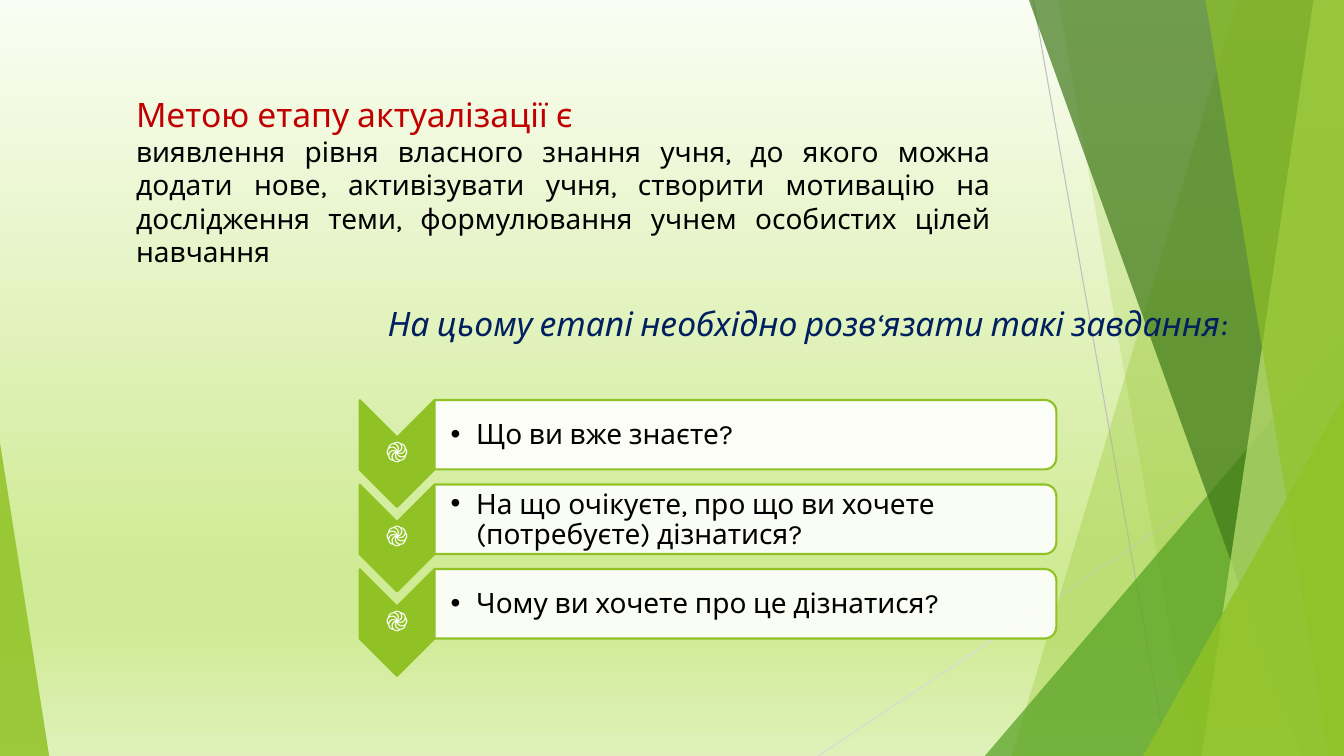
from lxml import etree
from pptx import Presentation
from pptx.dml.color import RGBColor
from pptx.enum import shapes, text
from pptx.oxml.ns import qn
from pptx.util import Cm, Pt

FONT = "Karla"
GREEN, WHITE, BLACK = "90C226", "FFFFFF", "000000"
WIDTH, HEIGHT = 33.87, 19.05
BACKGROUND = [(0, "FAFDF3"), (74, "D0EB96"), (83, "D0EB96"), (100, "DFF1B9")]

RAYS = [((26.04, 0), (29.41, HEIGHT), "BFBFBF"),
        ((WIDTH, 10.24), (20.62, HEIGHT), "D9D9D9")]
# Bands: top and bottom x of the slanted edge. Triangles: left, top, width, apex.
PANELS = [
    ("band", (31.19, 25.5), GREEN, 30),
    ("band", (26.67, 30.05), GREEN, 20),
    ("triangle", (24.82, 8.46, 9.05, 1), "54A021", 72),
    ("band", (25.93, 32.79), "3F7819", 70),
    ("band", (33.1, 30.28), "C0E474", 70),
    ("band", (30.38, 33.48), GREEN, 65),
    ("triangle", (28.81, 9.98, 5.06, 1), GREEN, 80),
    ("triangle", (0, 11.15, 1.24, 0), GREEN, 85),
]

GOAL_TITLE = "Метою етапу актуалізації є"
GOAL = ("виявлення рівня власного знання учня, до якого можна додати нове, "
        "активізувати учня, створити мотивацію на дослідження теми, "
        "формулювання учнем особистих цілей навчання")
TASKS_TITLE = "На цьому етапі необхідно розв‘язати такі завдання:"
QUESTIONS = ["Що ви вже знаєте?",
             "На що очікуєте, про що ви хочете (потребуєте) дізнатися?",
             "Чому ви хочете про це дізнатися?"]
MARK = "֎"
ROW_STEP = 2.13
TIGHT = {"margin_left": Cm(0.03), "margin_right": Cm(0.03),
         "margin_top": Cm(0.03), "margin_bottom": Cm(0.03),
         "vertical_anchor": text.MSO_ANCHOR.MIDDLE}


def rgb(value):
    return RGBColor.from_string(value)


def apply(target, values):
    for name, value in values.items():
        setattr(target, name, value)


def paint(sp, fill, opacity=100, line=None):
    sp.shadow.inherit = False
    sp.fill.solid()
    sp.fill.fore_color.rgb = rgb(fill)
    if opacity < 100:
        color = sp.fill._xPr.find(qn("a:solidFill"))[0]
        etree.SubElement(color, qn("a:alpha"), val=str(opacity * 1000))
    if line:
        sp.line.color.rgb = rgb(line)
        sp.line.width = Pt(1.5)
    else:
        sp.line.fill.background()


def add_preset(s, kind, box):
    return s.shapes.add_shape(kind, *map(Cm, box))


def add_text(s, box, frame=None):
    tf = s.shapes.add_textbox(*map(Cm, box)).text_frame
    apply(tf, {"word_wrap": True, **(frame or {})})
    return tf


def write(p, words, size, color, paragraph=None, italic=False):
    apply(p, paragraph or {})
    r = p.add_run()
    r.text = words
    apply(r.font, {"name": FONT, "size": Pt(size), "italic": italic})
    r.font.color.rgb = rgb(color)


def set_bullet(p):
    pr = p._p.get_or_add_pPr()
    pr.set("marL", str(Cm(0.64)))
    pr.set("indent", str(Cm(-0.64)))
    etree.SubElement(pr, qn("a:buFont"), typeface="Arial")
    etree.SubElement(pr, qn("a:buChar"), char="•")


def draw_background(s):
    fill = s.background.fill
    fill.gradient()
    fill.gradient_angle = 270
    stops = s.element.find(".//" + qn("a:gsLst"))
    for stop in list(stops):
        stops.remove(stop)
    for position, color in BACKGROUND:
        stop = etree.SubElement(stops, qn("a:gs"), pos=str(position * 1000))
        etree.SubElement(stop, qn("a:srgbClr"), val=color)


def draw_decoration(s):
    for start, end, color in RAYS:
        ray = s.shapes.add_connector(shapes.MSO_CONNECTOR.STRAIGHT,
                                     *map(Cm, start + end))
        ray.line.color.rgb = rgb(color)
        ray.line.width = Pt(0.75)
        etree.SubElement(ray._element.spPr, qn("a:effectLst"))
    for kind, geometry, color, opacity in PANELS:
        if kind == "band":
            top_x, bottom_x = geometry
            corners = [(WIDTH, 0), (WIDTH, HEIGHT), (bottom_x, HEIGHT)]
            outline = s.shapes.build_freeform(Cm(top_x), 0)
            outline.add_line_segments([(Cm(x), Cm(y)) for x, y in corners])
            sp = outline.convert_to_shape()
        else:
            left, top, width, apex = geometry
            sp = add_preset(s, shapes.MSO_SHAPE.ISOSCELES_TRIANGLE,
                            (left, top, width, HEIGHT - top))
            sp.adjustments[0] = apex
        paint(sp, color, opacity)


def draw_question(s, words, dy):
    chevron = add_preset(s, shapes.MSO_SHAPE.CHEVRON, (8.66, 10.49 + dy, 2.69, 1.88))
    paint(chevron, GREEN, line=GREEN)
    tf = add_text(s, (9.07, 11.02 + dy, 1.88, 0.81), TIGHT)
    write(tf.paragraphs[0], MARK, 20, WHITE,
          {"alignment": text.PP_ALIGN.CENTER, "line_spacing": 0.9})

    bar = add_preset(s, shapes.MSO_SHAPE.ROUND_2_SAME_RECTANGLE,
                     (17.91, 3.12 + dy, 1.75, 15.67))
    paint(bar, WHITE, 90, GREEN)
    chevron.rotation = bar.rotation = 90
    tf = add_text(s, (10.95, 10.19 + dy, 15.57, 1.57),
                  {**TIGHT, "margin_left": Cm(0.41)})
    p = tf.paragraphs[0]
    p.line_spacing = 0.9
    set_bullet(p)
    write(p, words, 20, BLACK)


def main():
    prs = Presentation()
    prs.slide_width, prs.slide_height = Cm(WIDTH), Cm(HEIGHT)
    s = prs.slides.add_slide(prs.slide_layouts[6])
    draw_background(s)
    draw_decoration(s)

    tf = add_text(s, (3.18, 2.24, 22.02, 3.84))
    write(tf.paragraphs[0], GOAL_TITLE, 24, "C00000")
    write(tf.add_paragraph(), GOAL, 20, BLACK,
          {"alignment": text.PP_ALIGN.JUSTIFY})
    tf = add_text(s, (9.52, 7.52, 22.43, 2.82))
    write(tf.paragraphs[0], TASKS_TITLE, 24, "002060", italic=True)

    for row, words in enumerate(QUESTIONS):
        draw_question(s, words, row * ROW_STEP)
    prs.save("out.pptx")


if __name__ == "__main__":
    main()
